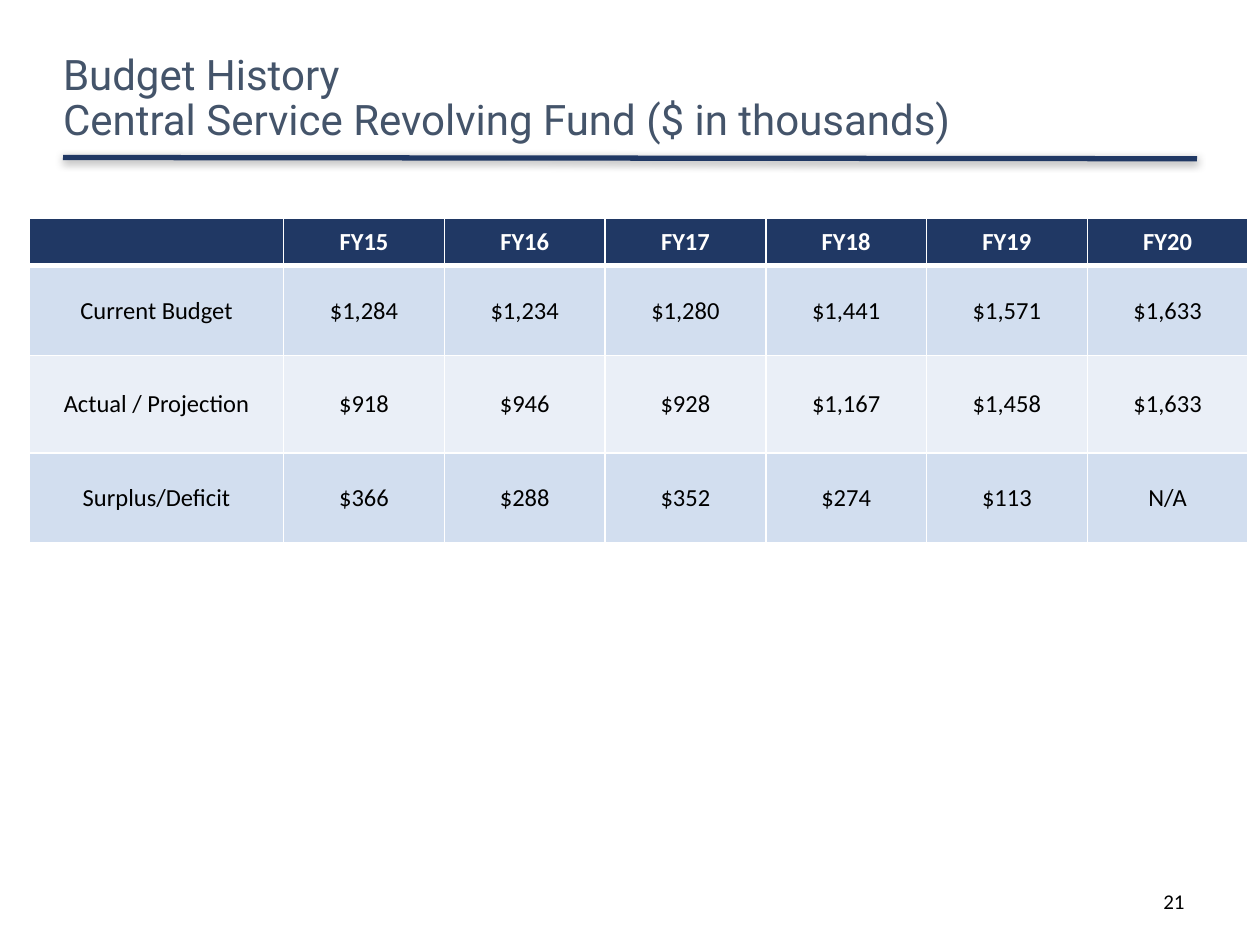
from lxml import etree
from pptx import Presentation
from pptx import util as u
from pptx.dml.color import RGBColor
from pptx.enum import shapes, text
from pptx.oxml import parse_xml
from pptx.oxml.ns import nsdecls, qn

Pt = u.Pt


class Theme:
    navy = "203864"
    slate = "44546A"
    white = "FFFFFF"
    black = "000000"
    bands = ("D2DEEF", "EAEFF7")
    title_font, body_font = "Roboto", "Calibri"
    title_size, cell_size, number_size = 24, 14, 12


def add_run(para, words, font, size, color, bold=False):
    run = para.add_run()
    run.text = words
    run.font.name = font
    run.font.size = Pt(size)
    run.font.bold = bold
    run.font.color.rgb = RGBColor.from_string(color)


def add_borders(cell, bottom_width):
    """Draw white lines on all four sides; they must precede the cell's fill."""
    widths = {"lnL": 1, "lnR": 1, "lnT": 1, "lnB": bottom_width}
    properties = cell._tc.get_or_add_tcPr()
    for index, (side, width) in enumerate(widths.items()):
        properties.insert(index, parse_xml(
            f'<a:{side} {nsdecls("a")} w="{Pt(width)}"><a:solidFill>'
            f'<a:srgbClr val="{Theme.white}"/></a:solidFill></a:{side}>'))


deck = Presentation()
deck.slide_width, deck.slide_height = Pt(720), Pt(540)
page = deck.slides.add_slide(deck.slide_layouts[5])

# Rule under the title, with a soft shadow
rule = page.shapes.add_connector(
    shapes.MSO_CONNECTOR.STRAIGHT, Pt(36), Pt(90), Pt(684), Pt(90.72))
rule.line.color.rgb = RGBColor.from_string(Theme.navy)
rule.line.width = Pt(3)
effects = etree.SubElement(rule._element.spPr, qn("a:effectLst"))
effects.append(parse_xml(
    f'<a:outerShdw {nsdecls("a")} blurRad="{Pt(5)}" dist="{Pt(1.6)}" dir="5400000" '
    f'rotWithShape="0"><a:srgbClr val="{Theme.black}"><a:alpha val="38000"/>'
    '</a:srgbClr></a:outerShdw>'))

# Title
title = page.shapes.title
title.left, title.top, title.width, title.height = Pt(36), Pt(23.76), Pt(527), Pt(66.24)
frame = title.text_frame
frame.margin_left = frame.margin_right = frame.margin_top = frame.margin_bottom = 0
frame.word_wrap = True
frame.auto_size = text.MSO_AUTO_SIZE.NONE
frame.vertical_anchor = text.MSO_ANCHOR.MIDDLE
para = frame.paragraphs[0]
para.alignment = text.PP_ALIGN.LEFT
para.line_spacing = 0.9
title_style = (Theme.title_font, Theme.title_size, Theme.slate)
add_run(para, "Budget History", *title_style)
para.add_line_break()
add_run(para, "Central Service Revolving Fund ($ in thousands)", *title_style)

# Page number
box = page.shapes.add_textbox(Pt(516.24), Pt(500.4), Pt(167.76), Pt(28.8))
box.text_frame.word_wrap = True
box.text_frame.vertical_anchor = text.MSO_ANCHOR.MIDDLE
para = box.text_frame.paragraphs[0]
para.alignment = text.PP_ALIGN.RIGHT
add_run(para, "21", Theme.body_font, Theme.number_size, Theme.black)

# Budget table
budget = [
    ["", "FY15", "FY16", "FY17", "FY18", "FY19", "FY20"],
    ["Current Budget", "$1,284", "$1,234", "$1,280", "$1,441", "$1,571", "$1,633"],
    ["Actual / Projection", "$918", "$946", "$928", "$1,167", "$1,458", "$1,633"],
    ["Surplus/Deficit", "$366", "$288", "$352", "$274", "$113", "N/A"],
]
column_widths = [145.2] + [91.85] * 6
row_heights = [27, 51.5, 55.5, 51.5]
table = page.shapes.add_table(
    len(budget), len(column_widths), Pt(16.9), Pt(124.8),
    Pt(sum(column_widths)), Pt(sum(row_heights))).table
for column, width in zip(table.columns, column_widths):
    column.width = Pt(width)
for row_index, values in enumerate(budget):
    table.rows[row_index].height = Pt(row_heights[row_index])
    header = row_index == 0
    fill = Theme.navy if header else Theme.bands[(row_index - 1) % 2]
    for column_index, value in enumerate(values):
        cell = table.cell(row_index, column_index)
        cell.fill.solid()
        cell.fill.fore_color.rgb = RGBColor.from_string(fill)
        add_borders(cell, 3 if header else 1)
        cell.vertical_anchor = text.MSO_ANCHOR.MIDDLE
        if not value:
            cell.margin_top = cell.margin_bottom = 0
            continue
        para = cell.text_frame.paragraphs[0]
        para.alignment = text.PP_ALIGN.CENTER
        add_run(para, value, Theme.body_font, Theme.cell_size,
                Theme.white if header else Theme.black, header)

deck.save("out.pptx")
